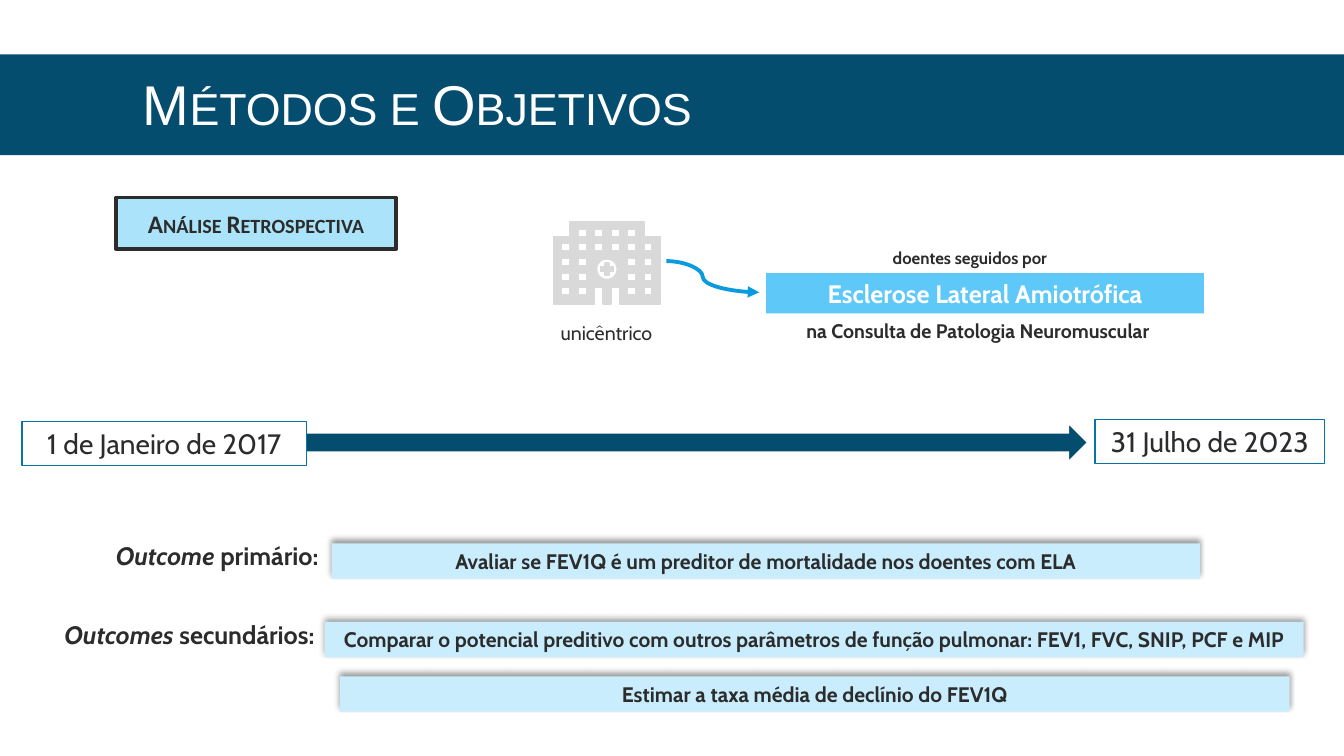
from dataclasses import dataclass, field
from math import cos, pi, sin
from typing import NamedTuple

from lxml.etree import SubElement
from pptx import Presentation
from pptx.dml.color import RGBColor
from pptx.enum.shapes import MSO_CONNECTOR, MSO_SHAPE
from pptx.enum.text import MSO_ANCHOR, MSO_AUTO_SIZE, PP_ALIGN
from pptx.oxml.ns import qn
from pptx.util import Inches, Pt

CELL = Inches(0.1)  # columns and rows of the page grid
NAVY = RGBColor(0x04, 0x4D, 0x6E)
TEAL = RGBColor(0x07, 0x74, 0xA6)
BLUE = RGBColor(0x09, 0x9B, 0xDD)
CYAN = RGBColor(0x00, 0xB0, 0xF0)
SKY = RGBColor(0x5E, 0xC8, 0xF8)
PALE = RGBColor(0xC9, 0xED, 0xFD)
INK = RGBColor(0x2C, 0x2C, 0x2C)
GREY = RGBColor(0xD9, 0xD9, 0xD9)
GREY_EDGE = RGBColor(0xDA, 0xDA, 0xDA)
WHITE = RGBColor(0xFF, 0xFF, 0xFF)


class Area(NamedTuple):
    column: float
    row: float
    columns: float
    rows: float

    def emu(self) -> list[int]:
        return [round(cells * CELL) for cells in self]


@dataclass
class Block:
    """A box of text; words in `lead` come first, in italics."""
    area: Area
    words: str = ""
    size: float = 15
    lead: str = ""
    name: str = "Cabin"
    bold: bool = True
    color: RGBColor = INK
    small_caps: bool = False
    fill: RGBColor | None = None
    opacity: int = 100
    edge: RGBColor | None = None
    edge_width: float = 1
    shadow: bool = False
    kind: MSO_SHAPE = MSO_SHAPE.RECTANGLE
    frame: dict = field(default_factory=lambda: {"auto_size": MSO_AUTO_SIZE.SHAPE_TO_FIT_TEXT})
    paragraph: dict = field(default_factory=lambda: {"alignment": PP_ALIGN.CENTER})


MIDDLE = {"vertical_anchor": MSO_ANCHOR.MIDDLE}
LEFT = {"alignment": PP_ALIGN.LEFT}
DATE = {"size": 20, "bold": False, "fill": WHITE, "edge": TEAL}
GOAL = {"fill": PALE, "shadow": True}
LABEL = {"size": 18, "paragraph": LEFT}

BLOCKS = [
    Block(Area(0, 5.4, 133.3, 10), fill=NAVY),
    Block(Area(13.2, 2.5, 107, 16.5), "Métodos e Objetivos", 40, name="Arial", bold=False,
          color=WHITE, small_caps=True, frame=MIDDLE, paragraph={**LEFT, "line_spacing": 0.85}),
    Block(Area(20.85, 42.05, 87, 3.7), fill=NAVY, edge=WHITE, edge_width=0.75,
          kind=MSO_SHAPE.RIGHT_ARROW),
    Block(Area(2.2, 41.8, 28.2, 4.4), "1 de Janeiro de 2017", **DATE),
    Block(Area(108.6, 41.6, 22.8, 4.4), "31 Julho de 2023", **DATE),
    Block(Area(11.5, 19.6, 27.8, 5.1), "Análise Retrospectiva", 18, name="Calibri",
          small_caps=True, fill=CYAN, opacity=33, edge=INK, edge_width=2.5, frame=MIDDLE),
    Block(Area(79.5, 24.3, 33.4, 4.4), "doentes seguidos por", 12,
          frame={"vertical_anchor": MSO_ANCHOR.TOP},
          paragraph={"alignment": PP_ALIGN.CENTER, "line_spacing": 0.9}),
    Block(Area(76, 27.1, 43.4, 4), "Esclerose Lateral Amiotrófica", 18, color=WHITE, fill=SKY),
    Block(Area(75, 29.8, 44, 6), "na Consulta de Patologia Neuromuscular", 14, frame=MIDDLE),
    Block(Area(53.1, 31.3, 14.1, 3.4), "unicêntrico", 14, bold=False),
    Block(Area(32.9, 53.9, 86.1, 3.5),
          "Avaliar se FEV1Q é um preditor de mortalidade nos doentes com ELA", **GOAL),
    Block(Area(10.5, 53.1, 32.8, 4), "primário:", lead="Outcome ", **LABEL),
    Block(Area(32.2, 61.7, 97.1, 3.5), "Comparar o potencial preditivo com outros parâmetros "
          "de função pulmonar: FEV1, FVC, SNIP, PCF e MIP", **GOAL),
    Block(Area(5.4, 60.9, 32.8, 4), "secundários:", lead="Outcomes ", **LABEL),
    Block(Area(33.7, 67.1, 94.2, 3.5), "Estimar a taxa média de declínio do FEV1Q", **GOAL),
]

# The hospital has its own grid of modules, one window wide and one window high.
HOSPITAL = Area(54.9, 22, 10.6, 8.15)
MODULES_WIDE, MODULES_HIGH = 13, 11.2
WALLS = [(2, 0), (2, 2), (0, 2), (0, 11.2), (5, 11.2), (5, 9), (6, 9), (6, 11.2),
         (7, 11.2), (7, 9), (8, 9), (8, 11.2), (13, 11.2), (13, 2), (11, 2), (11, 0)]
WINDOWS = {1: (3, 5, 7, 9), 3: (1, 3, 5, 7, 9, 11),
           5: (1, 3, 9, 11), 7: (1, 3, 9, 11), 9: (1, 3, 9, 11)}
SIGN = (6.5, 6.47)


def set_all(target, values: dict) -> None:
    for key, value in values.items():
        setattr(target, key, value)


def paint(shape, fill: RGBColor | None, edge: RGBColor | None, width: float) -> None:
    shape.shadow.inherit = False
    if fill is None:
        shape.fill.background()
    else:
        shape.fill.solid()
        shape.fill.fore_color.rgb = fill
    if edge is None:
        shape.line.fill.background()
    else:
        shape.line.color.rgb = edge
        shape.line.width = Pt(width)


def add_color_alpha(parent, percent: int) -> None:
    SubElement(parent, qn("a:alpha"), val=str(percent * 1000))


def cast_shadow(shape) -> None:
    effects = shape._element.spPr.find(qn("a:effectLst"))
    shadow = SubElement(effects, qn("a:outerShdw"), blurRad=str(Pt(4)), dist=str(Pt(3)),
                        dir=str(264 * 60000), rotWithShape="0")
    add_color_alpha(SubElement(shadow, qn("a:srgbClr"), val="000000"), 40)


def write(box, block: Block) -> None:
    frame = box.text_frame
    set_all(frame, {"word_wrap": True, "vertical_anchor": MSO_ANCHOR.TOP, **block.frame})
    para = frame.paragraphs[0]
    set_all(para, block.paragraph)
    for words, italic in ((block.lead, True), (block.words, False)):
        if not words:
            continue
        span = para.add_run()
        span.text = words
        set_all(span.font, {"name": block.name, "size": Pt(block.size),
                            "bold": block.bold, "italic": italic})
        span.font.color.rgb = block.color
        if block.small_caps:
            span._r.get_or_add_rPr().set("cap", "small")


def draw_block(page, block: Block) -> None:
    if block.fill is None:
        box = page.shapes.add_textbox(*block.area.emu())
    else:
        box = page.shapes.add_shape(block.kind, *block.area.emu())
        paint(box, block.fill, block.edge, block.edge_width)
        if block.opacity < 100:
            add_color_alpha(box._element.spPr.find(f"{qn('a:solidFill')}/{qn('a:srgbClr')}"),
                            block.opacity)
        if block.shadow:
            cast_shadow(box)
    if block.words:
        write(box, block)


def hospital_contours() -> list[list[tuple[float, float]]]:
    """Walls, windows, round sign and cross, in modules."""
    windows = [[(x, y), (x + 1, y), (x + 1, y + 1), (x, y + 1)]
               for y, columns in WINDOWS.items() for x in columns]
    x, y = SIGN
    turns = [2 * pi * step / 40 for step in range(40)]
    ring = [(x + 1.25 * cos(turn), y + 1.4 * sin(turn)) for turn in turns]
    quarter = [(0.3, 0.83), (0.3, 0.35), (0.8, 0.35)]
    cross = [(x + side_x * dx, y + side_y * dy)
             for side_x, side_y, order in ((1, 1, 1), (1, -1, -1), (-1, -1, 1), (-1, 1, -1))
             for dx, dy in quarter[::order]]
    return [WALLS, *windows, ring, cross]


def draw_hospital(page) -> None:
    left, top, width, height = HOSPITAL.emu()
    contours = [[(left + x * width / MODULES_WIDE, top + y * height / MODULES_HIGH)
                 for x, y in contour] for contour in hospital_contours()]
    builder = page.shapes.build_freeform(*contours[0][0])
    for contour in contours:
        if contour is not contours[0]:
            builder.move_to(*contour[0])
        builder.add_line_segments(contour[1:], close=True)
    paint(builder.convert_to_shape(), GREY, GREY_EDGE, 1)


def draw_curved_arrow(page) -> None:
    ends = Area(66.1, 25.9, 75.3, 29).emu()
    arrow = page.shapes.add_connector(MSO_CONNECTOR.CURVE, *ends)
    arrow.line.color.rgb = BLUE
    arrow.line.width = Pt(2.75)
    properties = arrow._element.spPr
    SubElement(properties.find(qn("a:ln")), qn("a:tailEnd"), type="triangle")
    SubElement(properties, qn("a:effectLst"))
    bends = properties.find(qn("a:prstGeom")).find(qn("a:avLst"))
    SubElement(bends, qn("a:gd"), name="adj1", fmla="val 39100")


def main() -> None:
    deck = Presentation()
    set_all(deck, {"slide_width": Inches(13.33), "slide_height": Inches(7.5)})
    page = deck.slides.add_slide(deck.slide_layouts[6])
    for block in BLOCKS:
        draw_block(page, block)
    draw_hospital(page)
    draw_curved_arrow(page)
    deck.save("out.pptx")


if __name__ == "__main__":
    main()
